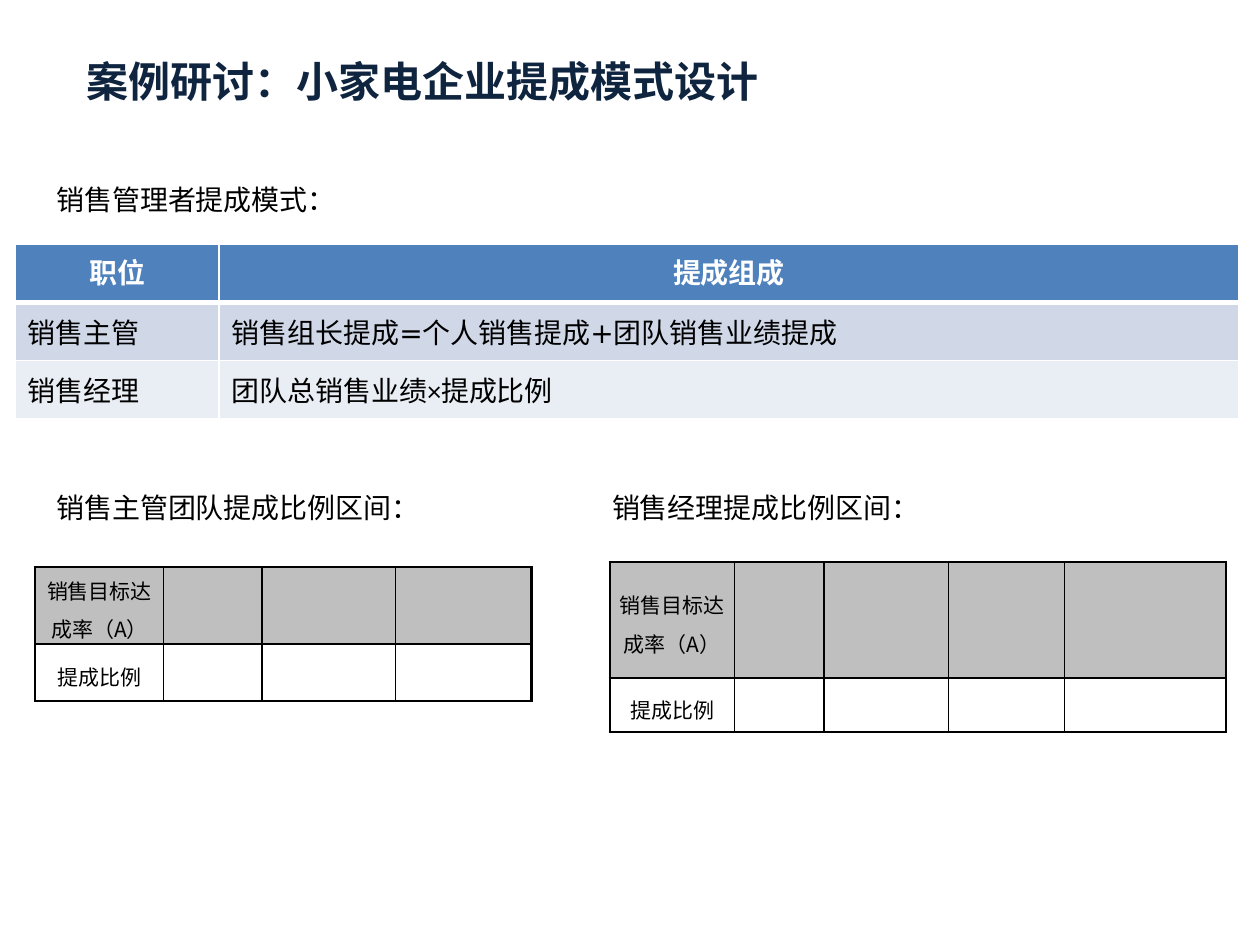
from dataclasses import dataclass

from lxml import etree
from pptx import Presentation
from pptx import util as u
from pptx.dml.color import RGBColor
from pptx.enum import text
from pptx.oxml import ns


@dataclass(frozen=True)
class Theme:
    han: str = "Noto Sans CJK SC"
    symbol: str = "DejaVu Sans"
    latin: str = "Calibri"
    ink: str = "000000"
    paper: str = "FFFFFF"
    title: str = "0F243E"
    header: str = "4F81BD"
    band_dark: str = "D0D8E8"
    band_light: str = "E9EDF4"
    grey: str = "BFBFBF"
    title_size: int = 24
    body_size: int = 16
    small_size: int = 12


THEME = Theme()
RATE_LABELS = ("销售目标达成率（A）", "提成比例")


def write(frame, words, size=THEME.body_size, color=THEME.ink, font=THEME.han,
          bold=False, align=text.PP_ALIGN.LEFT, spacing=None):
    para = frame.paragraphs[0]
    para.alignment = align
    if spacing:
        para.line_spacing = u.Pt(spacing)
    span = para.add_run()
    span.text = words
    span.font.size = u.Pt(size)
    span.font.bold = bold
    span.font.color.rgb = RGBColor.from_string(color)
    span.font.name = font
    east = etree.SubElement(span.font._element, ns.qn("a:ea"))
    east.set("typeface", THEME.han)


def add_label(page, words, left, top, width=3.76, height=0.72, **style):
    box = page.shapes.add_textbox(*map(u.Inches, (left, top, width, height)))
    frame = box.text_frame
    frame.word_wrap = True
    frame.vertical_anchor = text.MSO_ANCHOR.MIDDLE
    write(frame, words, **style)


def set_borders(cell, color, left=1, right=1, top=1, bottom=1):
    properties = cell._tc.get_or_add_tcPr()
    for side, points in zip("LRTB", (left, right, top, bottom)):
        line = etree.SubElement(properties, ns.qn(f"a:ln{side}"), w=str(u.Pt(points)))
        fill = etree.SubElement(line, ns.qn("a:solidFill"))
        etree.SubElement(fill, ns.qn("a:srgbClr"), val=color)


def set_fill(cell, color):
    if color:
        cell.fill.solid()
        cell.fill.fore_color.rgb = RGBColor.from_string(color)
    else:
        cell.fill.background()


def add_grid(page, left, top, widths, heights):
    bounds = map(u.Inches, (left, top, sum(widths), sum(heights)))
    table = page.shapes.add_table(len(heights), len(widths), *bounds).table
    table.first_row = False
    table.horz_banding = False
    for column, width in zip(table.columns, widths):
        column.width = u.Inches(width)
    for row, height in zip(table.rows, heights):
        row.height = u.Inches(height)
    return table


def add_position_table(page):
    table = add_grid(page, 0.12, 1.94, (1.62, 8.09), (0.46,) * 3)
    rows = (
        ("职位", "提成组成"),
        ("销售主管", "销售组长提成=个人销售提成+团队销售业绩提成"),
        ("销售经理", "团队总销售业绩×提成比例"),
    )
    fills = (THEME.header, THEME.band_dark, THEME.band_light)
    for i, (row, fill) in enumerate(zip(rows, fills)):
        head = i == 0
        for j, words in enumerate(row):
            cell = table.cell(i, j)
            set_borders(cell, THEME.paper, top=3 if i == 1 else 1, bottom=3 if head else 1)
            set_fill(cell, fill)
            cell.vertical_anchor = text.MSO_ANCHOR.TOP if head else text.MSO_ANCHOR.MIDDLE
            write(cell.text_frame, words, bold=head,
                  color=THEME.paper if head else THEME.ink,
                  font=THEME.latin if (i, j) == (2, 1) else THEME.symbol,
                  align=text.PP_ALIGN.CENTER if head else text.PP_ALIGN.LEFT)


def add_rate_table(page, left, top, widths, heights):
    table = add_grid(page, left, top, widths, heights)
    last = len(widths) - 1
    for i, label in enumerate(RATE_LABELS):
        for j in range(len(widths)):
            cell = table.cell(i, j)
            set_borders(cell, THEME.ink,
                        left=1.5 if j == 0 else 1, right=1.5 if j == last else 1,
                        top=1.5 if i == 0 else 1, bottom=1.5 if i == 1 else 1)
            set_fill(cell, THEME.grey if i == 0 else None)
        cell = table.cell(i, 0)
        cell.margin_left = cell.margin_right = u.Inches(0.07)
        cell.margin_top = cell.margin_bottom = 0
        cell.vertical_anchor = text.MSO_ANCHOR.MIDDLE
        write(cell.text_frame, label, size=THEME.small_size,
              align=text.PP_ALIGN.CENTER, spacing=22)


def main():
    deck = Presentation()
    deck.slide_width, deck.slide_height = u.Inches(10), u.Inches(7.5)
    page = deck.slides.add_slide(deck.slide_layouts[6])
    add_label(page, "案例研讨：小家电企业提成模式设计", 0.59, 0.37, 5.59, 0.54,
              size=THEME.title_size, color=THEME.title, bold=True)
    add_label(page, "销售管理者提成模式：", 0.35, 1.22)
    add_rate_table(page, 0.28, 4.5, (1.02, 0.78, 1.06, 1.08), (0.61, 0.45))
    add_position_table(page)
    add_label(page, "销售主管团队提成比例区间：", 0.35, 3.67)
    add_label(page, "销售经理提成比例区间：", 4.76, 3.67)
    add_rate_table(page, 4.84, 4.46, (0.99, 0.71, 0.99, 0.92, 1.28), (0.92, 0.43))
    deck.save("out.pptx")


if __name__ == "__main__":
    main()
